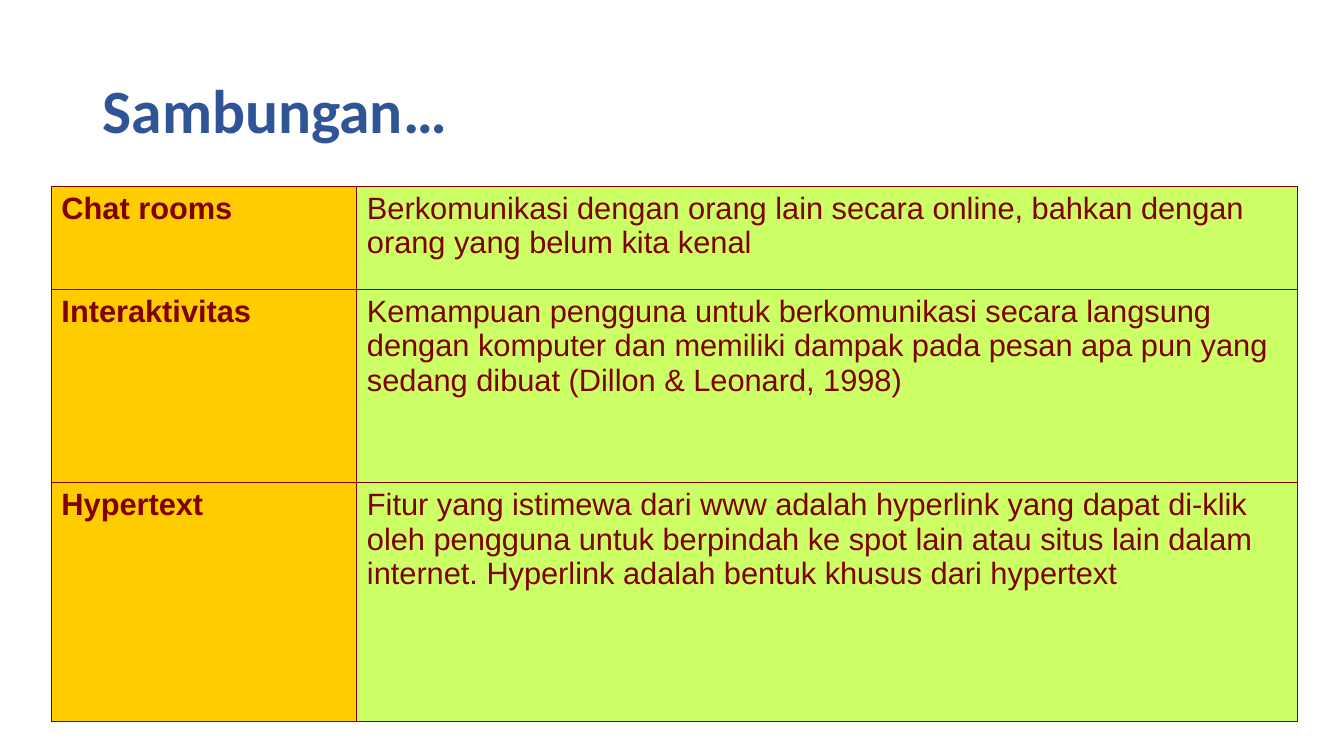
from lxml.etree import SubElement
from pptx import Presentation
from pptx.dml.color import RGBColor
from pptx.enum.text import MSO_ANCHOR, PP_ALIGN
from pptx.oxml.ns import qn
from pptx.util import Inches, Pt

BLUE = RGBColor(0x2F, 0x55, 0x97)
MAROON = RGBColor(0x80, 0x00, 0x00)
GOLD = RGBColor(0xFF, 0xCC, 0x00)
LIME = RGBColor(0xCC, 0xFF, 0x66)

COLUMN_WIDTHS = (3.03, 9.33)
ROW_HEIGHTS = (1.02, 1.92, 2.37)
TERMS = (
    ("Chat rooms",
     "Berkomunikasi dengan orang lain secara online, bahkan dengan orang yang belum kita kenal"),
    ("Interaktivitas",
     "Kemampuan pengguna untuk berkomunikasi secara langsung dengan komputer dan memiliki "
     "dampak pada pesan apa pun yang sedang dibuat (Dillon & Leonard, 1998)"),
    ("Hypertext",
     "Fitur yang istimewa dari www adalah hyperlink yang dapat di-klik oleh pengguna untuk "
     "berpindah ke spot lain atau situs lain dalam internet. Hyperlink adalah bentuk khusus "
     "dari hypertext"),
)


class PageBuilder:
    """Holds the style and the current page, and adds elements to it."""

    def __init__(self, page):
        self.page = page

    def style(self, para, name, size, color, bold):
        """Set the font of a whole paragraph."""
        font = para.font
        font.name, font.size, font.bold = name, Pt(size), bold
        font.color.rgb = color

    def title(self, text, left, top, width, height):
        """Place and format the title placeholder."""
        box = self.page.shapes.title
        box.left, box.top = Inches(left), Inches(top)
        box.width, box.height = Inches(width), Inches(height)
        frame = box.text_frame
        frame.text = text
        frame.vertical_anchor = MSO_ANCHOR.MIDDLE
        para = frame.paragraphs[0]
        para.alignment = PP_ALIGN.LEFT
        para.line_spacing = 0.9
        self.style(para, "Calibri", 44, BLUE, True)

    def border(self, cell):
        """Draw a thin line on all four sides of a cell."""
        properties = cell._tc.get_or_add_tcPr()
        for side in ("a:lnL", "a:lnR", "a:lnT", "a:lnB"):
            line = SubElement(properties, qn(side), w=str(Pt(1)))
            fill = SubElement(line, qn("a:solidFill"))
            SubElement(fill, qn("a:srgbClr"), val=str(MAROON))

    def cell(self, cell, text, fill, bold):
        """Fill one cell with text, borders and a background."""
        cell.text = text
        self.border(cell)
        cell.fill.solid()
        cell.fill.fore_color.rgb = fill
        self.style(cell.text_frame.paragraphs[0], "Arial", 22, MAROON, bold)

    def table(self, rows, left, top, widths, heights):
        """Add a two-column table of terms and their meanings."""
        table = self.page.shapes.add_table(
            len(heights), len(widths), Inches(left), Inches(top),
            Inches(sum(widths)), Inches(sum(heights))).table
        table.first_row = table.horz_banding = False
        for column, width in zip(table.columns, widths):
            column.width = Inches(width)
        for index, (height, (term, meaning)) in enumerate(zip(heights, rows)):
            table.rows[index].height = Inches(height)
            self.cell(table.cell(index, 0), term, GOLD, True)
            self.cell(table.cell(index, 1), meaning, LIME, False)


def main():
    """Build the deck and save it."""
    deck = Presentation()
    deck.slide_width, deck.slide_height = Inches(13.33), Inches(7.5)
    builder = PageBuilder(deck.slides.add_slide(deck.slide_layouts[5]))
    builder.title("Sambungan…", 0.92, 0.4, 11.5, 1.45)
    builder.table(TERMS, 0.51, 1.85, COLUMN_WIDTHS, ROW_HEIGHTS)
    deck.save("out.pptx")


if __name__ == "__main__":
    main()
